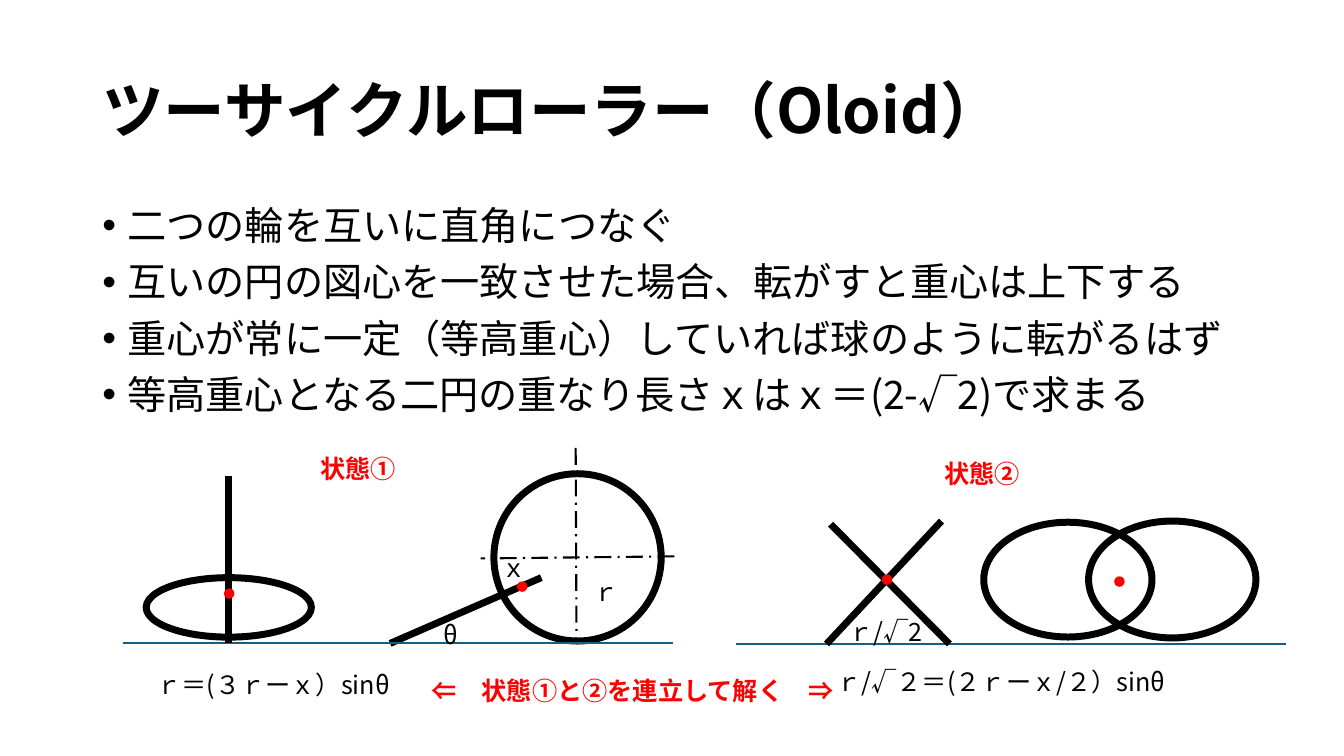
from lxml import etree
from pptx import Presentation
from pptx.dml.color import RGBColor
from pptx.enum import dml, shapes, text
from pptx.oxml import ns
from pptx.util import Pt

FONT = "Noto Sans CJK JP"
COLORS = {"ink": "000000", "accent": "FF0000", "ground": "156082"}
THICK, THIN = 5, 1.5
DOT = 7.5
LABEL_HEIGHT = 28.8


def color(name):
    return RGBColor.from_string(COLORS[name])


# Basic parts: every position is an offset in points from the region's origin
def add_text(page, box, lines, size=18, ink="ink", bold=False):
    left, top, width, height = map(Pt, box)
    frame = page.shapes.add_textbox(left, top, width, height).text_frame
    frame.word_wrap = True
    for number, line in enumerate(lines):
        para = frame.add_paragraph() if number else frame.paragraphs[0]
        para.text = line
        font = para.font
        font.name, font.size, font.bold = FONT, Pt(size), bold
        font.color.rgb = color(ink)
        props = para._p.pPr.find(ns.qn("a:defRPr"))
        latin = props.find(ns.qn("a:latin"))
        east_asian = etree.Element(ns.qn("a:ea"), typeface=FONT)
        latin.addnext(east_asian)
    return frame


def add_label(page, origin, left, top, width, wording, ink="ink", bold=False):
    box = (origin[0] + left, origin[1] + top, width, LABEL_HEIGHT)
    add_text(page, box, [wording], ink=ink, bold=bold)


def add_line(page, origin, start, end, width=THICK, ink="ink", dash=None):
    x, y = origin[:2]
    line = page.shapes.add_connector(
        shapes.MSO_CONNECTOR.STRAIGHT,
        Pt(x + start[0]), Pt(y + start[1]), Pt(x + end[0]), Pt(y + end[1]))
    line.line.width = Pt(width)
    line.line.color.rgb = color(ink)
    if dash:
        line.line.dash_style = dash
    etree.SubElement(line._element.spPr, ns.qn("a:effectLst"))


def add_oval(page, origin, left, top, width, height):
    oval = page.shapes.add_shape(
        shapes.MSO_SHAPE.OVAL, Pt(origin[0] + left), Pt(origin[1] + top),
        Pt(width), Pt(height))
    oval.shadow.inherit = False
    return oval


def add_ring(page, origin, left, top, width, height):
    ring = add_oval(page, origin, left, top, width, height)
    ring.fill.background()
    ring.line.width = Pt(THICK)
    ring.line.color.rgb = color("ink")


def add_centroid(page, origin, x, y):
    dot = add_oval(page, origin, x - DOT / 2, y - DOT / 2, DOT, DOT)
    dot.fill.solid()
    dot.fill.fore_color.rgb = color("accent")
    dot.line.fill.background()


# Title
def add_title(page, box):
    frame = add_text(page, box, ["ツーサイクルローラー（Oloid）"], 44, bold=True)
    frame.vertical_anchor = text.MSO_ANCHOR.MIDDLE
    frame.paragraphs[0].line_spacing = 0.9


# Bulleted explanation
def add_explanation(page, box):
    frame = add_text(page, box, [
        "二つの輪を互いに直角につなぐ",
        "互いの円の図心を一致させた場合、転がすと重心は上下する",
        "重心が常に一定（等高重心）していれば球のように転がるはず",
        "等高重心となる二円の重なり長さｘはｘ＝(2-√2)で求まる",
    ], 28)
    for para in frame.paragraphs:
        para.line_spacing = 0.9
        para.space_before = Pt(10)
        props = para._p.pPr
        props.set("marL", str(Pt(18)))
        props.set("indent", str(-Pt(18)))
        defaults = props.find(ns.qn("a:defRPr"))
        defaults.addprevious(etree.Element(ns.qn("a:buFont"), typeface="Arial"))
        defaults.addprevious(etree.Element(ns.qn("a:buChar"), char="•"))


# State 1: one ring lies flat or leans, the other stands upright
def add_first_state(page, box):
    width, floor = box[2:]
    add_line(page, box, (190.7, floor), (298.7, 92.6))
    add_ring(page, box, 264.8, 18.4, 119.5, 119.5)
    add_line(page, box, (0, floor), (width, floor), THIN, "ground")
    add_line(page, box, (75.5, 20), (75.5, floor))
    add_ring(page, box, 16.4, 92.6, 118, 42.5)
    for start, end in (((323.2, 0), (323.8, 138)), ((393.7, 77.4), (255.4, 78.9))):
        add_line(page, box, start, end, THIN, dash=dml.MSO_LINE.LONG_DASH_DOT)
    add_centroid(page, box, 285, 99)
    add_centroid(page, box, 75.7, 104)
    for left, top, wording in ((221.6, 118.5, "θ"), (328.9, 88.2, "ｒ"),
                               (263.4, 71, "ｘ")):
        add_label(page, box, left, top, 52, wording)
    add_label(page, box, 133.8, 0, 88, "状態①", "accent", True)
    add_label(page, box, 16.4, 154.5, 286.6, "ｒ＝(３ｒーｘ）sinθ")


# State 2: both rings lean at the same angle
def add_second_state(page, box):
    width, floor = box[2:]
    add_ring(page, box, 251.6, 52.2, 119.5, 83.5)
    add_ring(page, box, 176.7, 53, 120.2, 82)
    add_line(page, box, (0, floor), (width, floor), THIN, "ground")
    add_line(page, box, (146.5, 52.2), (64.4, floor))
    add_line(page, box, (67.3, 54.4), (152.2, floor))
    add_centroid(page, box, 107.6, 94)
    add_centroid(page, box, 273.6, 95.4)
    add_label(page, box, 73, 117, 82, "ｒ/√2")
    add_label(page, box, 141.4, 4, 88, "状態②", "accent", True)
    add_label(page, box, 64.4, 152.3, 286.6, "ｒ/√２＝(２ｒーｘ/２）sinθ")


# Conclusion joining both equations
def add_conclusion(page, box):
    add_text(page, box, ["⇐　状態①と②を連立して解く　⇒"], ink="accent", bold=True)


def main():
    deck = Presentation()
    deck.slide_width, deck.slide_height = Pt(960), Pt(540)
    page = deck.slides.add_slide(deck.slide_layouts[6])
    add_title(page, (66, 28.8, 828, 104.4))
    add_explanation(page, (66, 144, 828, 342.7))
    add_first_state(page, (88, 320, 392.4, 139.6))
    add_second_state(page, (526, 320, 392.6, 140))
    add_conclusion(page, (301, 478.8, 310.3, LABEL_HEIGHT))
    deck.save("out.pptx")


if __name__ == "__main__":
    main()
